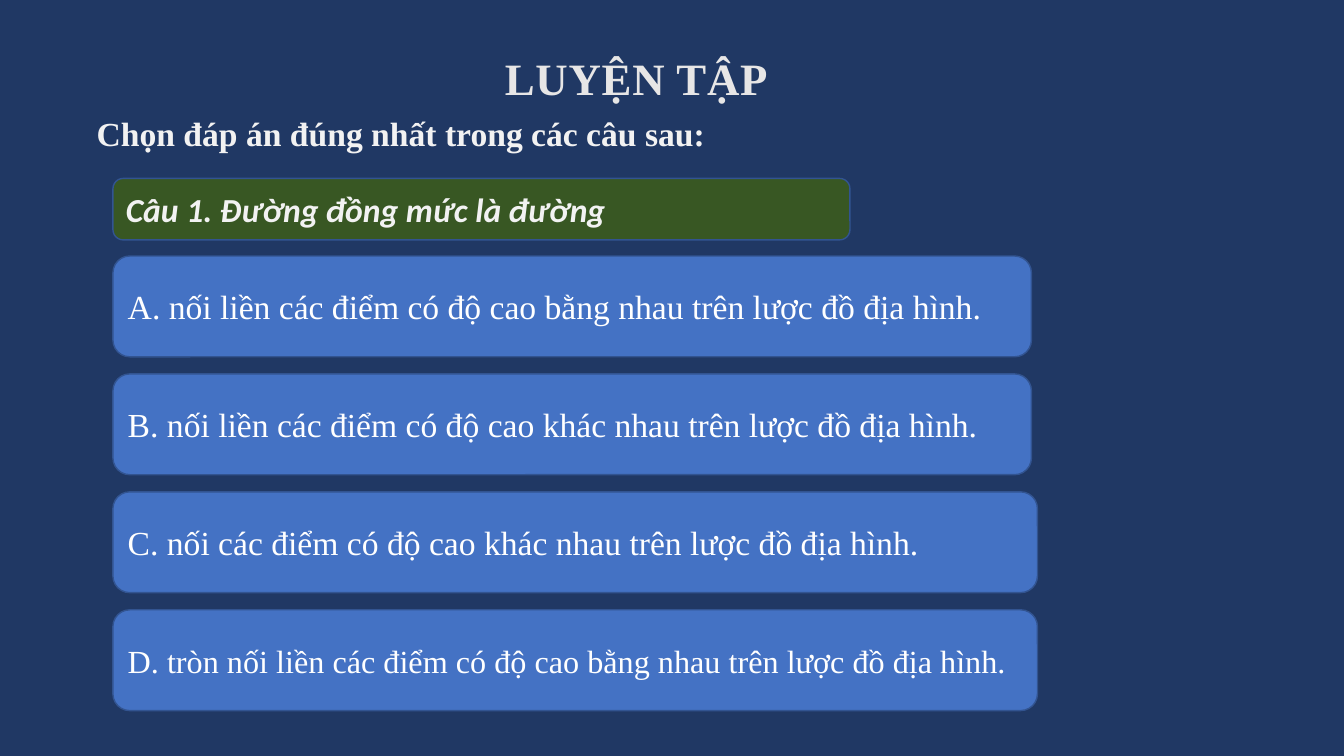
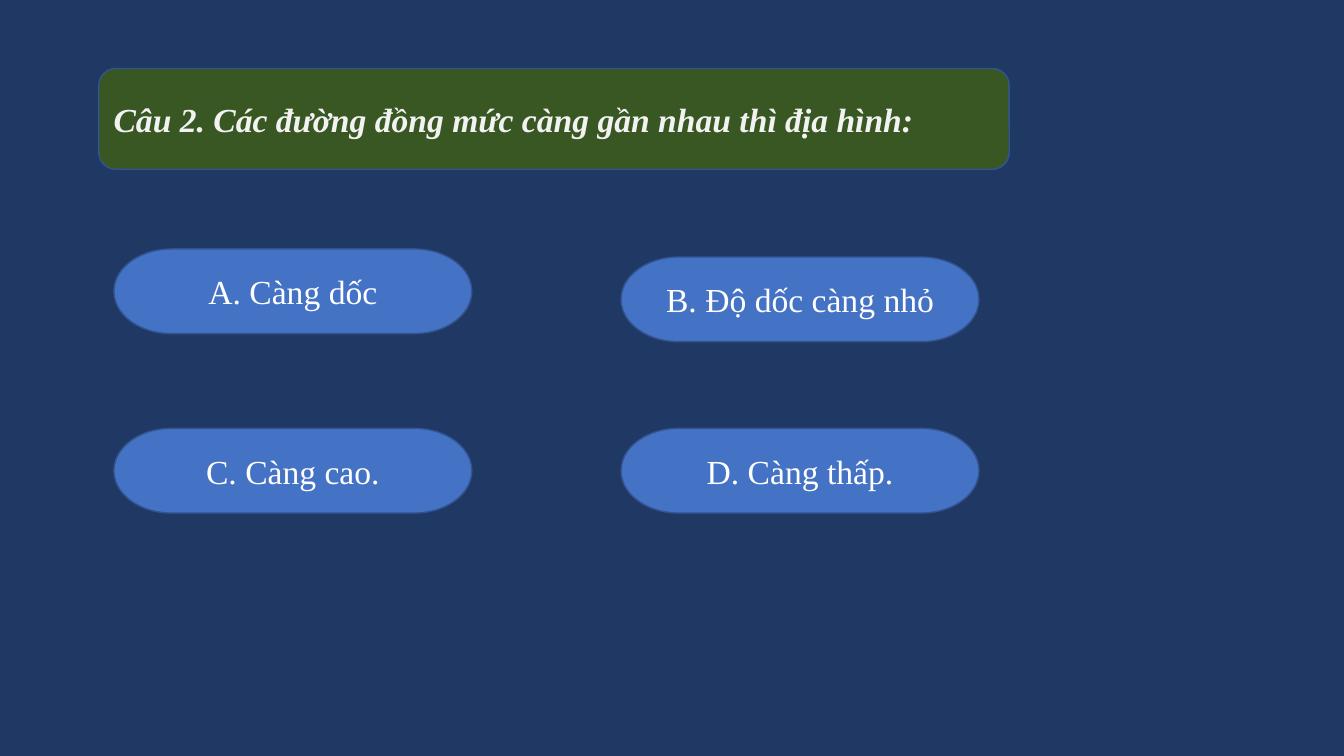
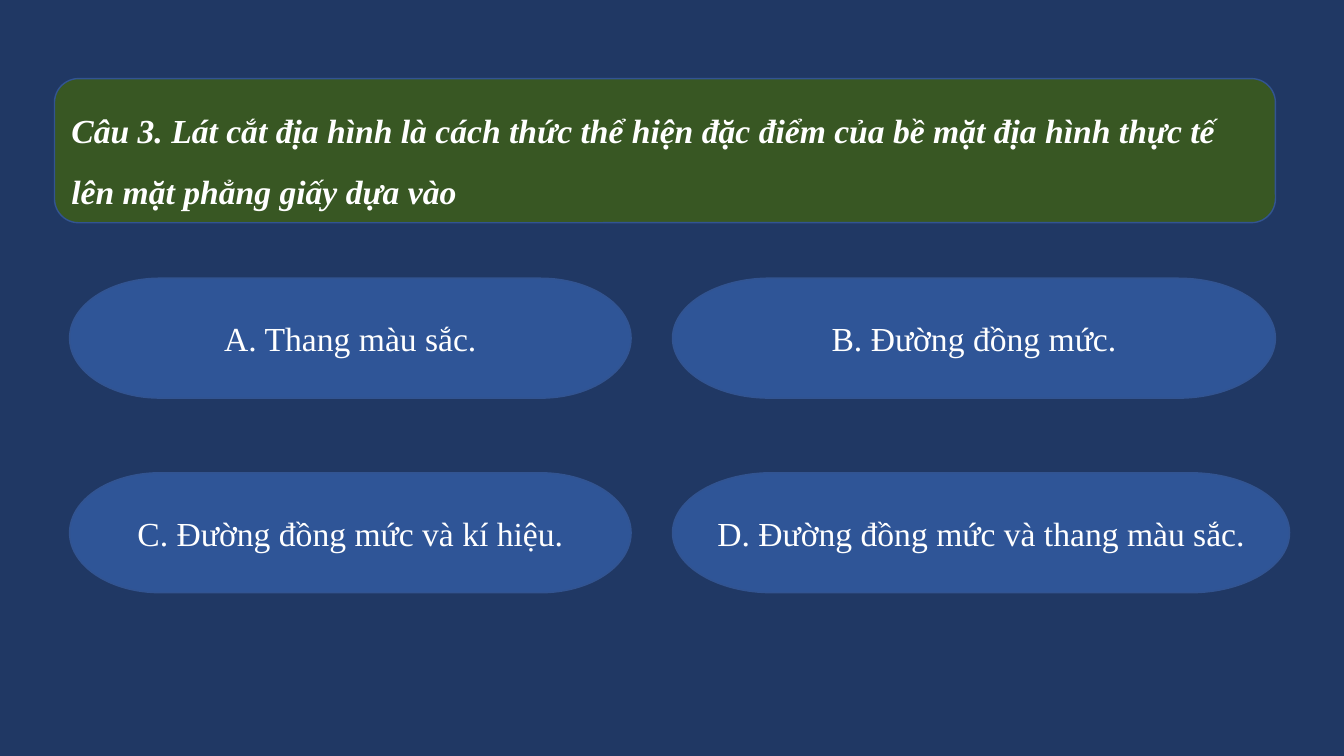
"""Build three geography quiz slides about contour lines."""
import dataclasses

import pptx
import pptx.dml.color
import pptx.enum.shapes
import pptx.enum.text
import pptx.presentation
import pptx.shapes.base
import pptx.slide
import pptx.util

Inches = pptx.util.Inches
Shapes = pptx.enum.shapes.MSO_SHAPE
Align = pptx.enum.text.PP_ALIGN
Anchor = pptx.enum.text.MSO_ANCHOR

SERIF = "Times New Roman"
NAVY = "203864"
GREEN = "385723"
BLUE = "4472C4"
DEEP_BLUE = "2F5597"
OUTLINE = "325491"
WHITE = "FFFFFF"
OFF_WHITE = "F2F2F2"
LIGHT_GRAY = "E7E6E6"


@dataclasses.dataclass(frozen=True)
class Box:
    left: float
    top: float
    width: float
    height: float


@dataclasses.dataclass(frozen=True)
class Question:
    text: str
    box: Box
    font: str = SERIF
    color: str = OFF_WHITE
    align: Align = Align.LEFT
    line_spacing: float = 1.0


@dataclasses.dataclass(frozen=True)
class Answer:
    text: str
    width: float
    size: float = 24
    drop: float = 0


@dataclasses.dataclass(frozen=True)
class AnswerGrid:
    left: float
    top: float
    height: float
    row_step: float
    answers: tuple[Answer, ...]
    columns: int = 2
    column_step: float = 0
    shape_type: Shapes = Shapes.FLOWCHART_TERMINATOR
    fill: str = BLUE
    align: Align = Align.CENTER


def rgb(value: str) -> pptx.dml.color.RGBColor:
    """Turn a hex string into a colour."""
    return pptx.dml.color.RGBColor.from_string(value)


def write_text(shape: pptx.shapes.base.BaseShape, text: str, *, size: float = 24,
               font: str = SERIF, color: str = WHITE, bold: bool = False,
               italic: bool = False, align: Align = Align.LEFT,
               anchor: Anchor = Anchor.MIDDLE, line_spacing: float = 1.0,
               tracking: float = 0) -> None:
    """Write one formatted paragraph into a shape."""
    frame = shape.text_frame
    frame.word_wrap = True
    frame.vertical_anchor = anchor
    paragraph = frame.paragraphs[0]
    paragraph.alignment = align
    paragraph.line_spacing = line_spacing
    run = paragraph.add_run()
    run.text = text
    run.font.name = font
    run.font.size = pptx.util.Pt(size)
    run.font.bold = bold
    run.font.italic = italic
    run.font.color.rgb = rgb(color)
    if tracking:
        run._r.get_or_add_rPr().set("spc", str(round(tracking * 100)))


def lengths(box: Box) -> tuple[pptx.util.Length, ...]:
    """Give the position and size of a box as lengths."""
    return Inches(box.left), Inches(box.top), Inches(box.width), Inches(box.height)


def add_heading(slide: pptx.slide.Slide, text: str, box: Box, *, size: float,
                color: str, tracking: float = 0) -> None:
    """Add a bold heading in a text box."""
    heading = slide.shapes.add_textbox(*lengths(box))
    write_text(heading, text, size=size, color=color, bold=True,
               anchor=Anchor.TOP, tracking=tracking)


def add_panel(slide: pptx.slide.Slide, shape_type: Shapes, box: Box,
              fill: str) -> pptx.shapes.base.BaseShape:
    """Add a filled, outlined shape without a shadow."""
    panel = slide.shapes.add_shape(shape_type, *lengths(box))
    panel.shadow.inherit = False
    panel.fill.solid()
    panel.fill.fore_color.rgb = rgb(fill)
    panel.line.color.rgb = rgb(OUTLINE)
    panel.line.width = pptx.util.Pt(1)
    return panel


def add_quiz(presentation: pptx.presentation.Presentation, question: Question,
             grid: AnswerGrid) -> pptx.slide.Slide:
    """Add a slide with a question and its grid of answers."""
    slide = presentation.slides.add_slide(presentation.slide_layouts[6])
    banner = add_panel(slide, Shapes.ROUNDED_RECTANGLE, question.box, GREEN)
    write_text(banner, question.text, font=question.font, color=question.color,
               bold=True, italic=True, align=question.align,
               line_spacing=question.line_spacing)
    for index, answer in enumerate(grid.answers):
        row, column = divmod(index, grid.columns)
        box = Box(grid.left + column * grid.column_step,
                  grid.top + row * grid.row_step + answer.drop,
                  answer.width, grid.height)
        panel = add_panel(slide, grid.shape_type, box, grid.fill)
        write_text(panel, answer.text, size=answer.size, align=grid.align)
    return slide


def main() -> None:
    """Build and save the presentation."""
    presentation = pptx.Presentation()
    presentation.slide_width = Inches(13.33)
    presentation.slide_height = Inches(7.5)
    background = presentation.slide_master.background.fill
    background.solid()
    background.fore_color.rgb = rgb(NAVY)

    practice = add_quiz(
        presentation,
        Question("Câu 1. Đường đồng mức là đường", Box(1.12, 1.77, 7.31, 0.61),
                 font="Calibri"),
        AnswerGrid(
            left=1.12, top=2.54, height=1, row_step=1.17, columns=1,
            shape_type=Shapes.ROUNDED_RECTANGLE, align=Align.LEFT,
            answers=(
                Answer("A. nối liền các điểm có độ cao bằng nhau trên lược đồ địa hình.", 9.11),
                Answer("B. nối liền các điểm có độ cao khác nhau trên lược đồ địa hình.", 9.11),
                Answer("C. nối các điểm có độ cao khác nhau trên lược đồ địa hình.", 9.17),
                Answer("D. tròn nối liền các điểm có độ cao bằng nhau trên lược đồ địa hình.",
                       9.17, size=23),
            )))
    add_heading(practice, "LUYỆN TẬP", Box(4.91, 0.45, 6.03, 0.64),
                size=32, color=LIGHT_GRAY, tracking=0.5)
    add_heading(practice, "Chọn đáp án đúng nhất trong các câu sau:",
                Box(0.86, 1.07, 7.31, 0.5), size=24, color=OFF_WHITE)

    add_quiz(
        presentation,
        Question("Câu 2. Các đường đồng mức càng gần nhau thì địa hình:",
                 Box(0.98, 0.68, 9.03, 1), align=Align.JUSTIFY),
        AnswerGrid(
            left=1.13, top=2.47, height=0.84, row_step=1.78, column_step=5.03,
            answers=(
                Answer("A. Càng dốc", 3.55),
                Answer("B. Độ dốc càng nhỏ", 3.55, drop=0.08),
                Answer("C. Càng cao.", 3.55),
                Answer("D. Càng thấp.", 3.55),
            )))

    add_quiz(
        presentation,
        Question("Câu 3. Lát cắt địa hình là cách thức thể hiện đặc điểm của bề mặt "
                 "địa hình thực tế lên mặt phẳng giấy dựa vào",
                 Box(0.54, 0.78, 12.11, 1.43), color=WHITE, line_spacing=1.5),
        AnswerGrid(
            left=0.69, top=2.76, height=1.19, row_step=1.93, column_step=5.98,
            fill=DEEP_BLUE,
            answers=(
                Answer("A. Thang màu sắc.", 5.57),
                Answer("B. Đường đồng mức.", 5.98),
                Answer("C. Đường đồng mức và kí hiệu.", 5.57),
                Answer("D. Đường đồng mức và thang màu sắc.", 6.12),
            )))

    presentation.save("out.pptx")


if __name__ == "__main__":
    main()
